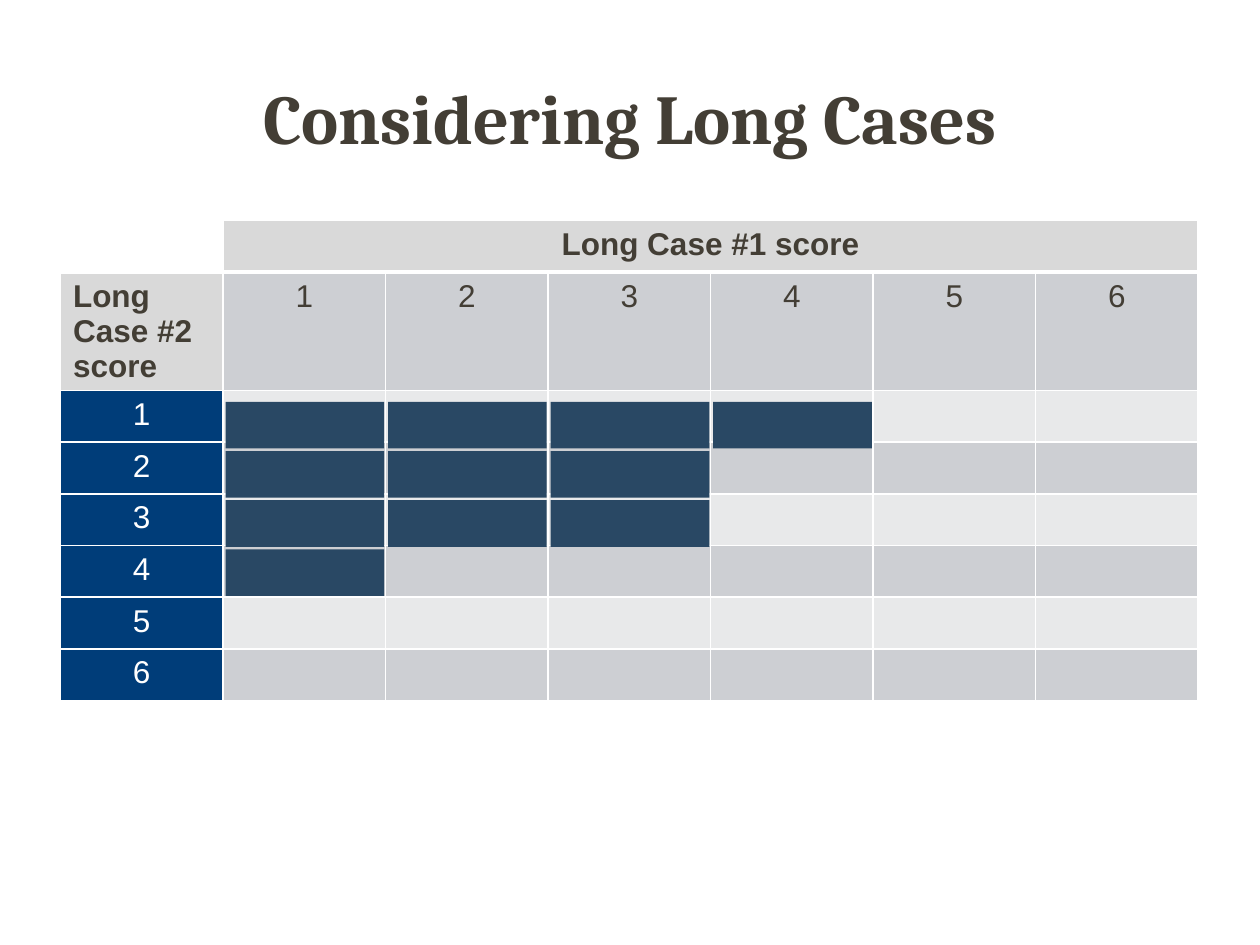
from lxml.etree import SubElement
from pptx import Presentation
from pptx.dml.color import RGBColor
from pptx.enum.shapes import MSO_SHAPE
from pptx.enum.text import MSO_ANCHOR, PP_ALIGN
from pptx.oxml.ns import qn
from pptx.util import Inches, Pt


def paint(fill, tone):
    fill.solid()
    fill.fore_color.rgb = RGBColor.from_string(tone)


def write(frame, text, size, face, tone, bold, align):
    line = frame.paragraphs[0]
    line.alignment = align
    run = line.add_run()
    run.text = text
    run.font.size = Pt(size)
    run.font.name = face
    run.font.bold = bold
    paint(run.font.fill, tone)


deck = Presentation()
deck.slide_width = Inches(10)
deck.slide_height = Inches(7.5)
slide = deck.slides.add_slide(deck.slide_layouts[6])

INK, WHITE, NAVY, SLATE = "433E35", "FFFFFF", "003D79", "294864"
HEAD, DARK, LIGHT = "D9D9D9", "CDCFD3", "E8E9EA"
LEFT, TOP, COL, ROW, TALL = 0.48, 1.75, 1.29, 0.41, 0.93
SCORES = 6

frame = slide.shapes.add_table(
    SCORES + 2, SCORES + 1, Inches(LEFT), Inches(TOP),
    Inches(COL * 7), Inches(ROW * 7 + TALL))
grid = frame.table
grid.first_row = False
grid.horz_banding = False
for col in grid.columns:
    col.width = Inches(COL)
for row in grid.rows:
    row.height = Inches(ROW)
grid.rows[1].height = Inches(TALL)

for r in range(SCORES + 2):
    for c in range(SCORES + 1):
        cell = grid.cell(r, c)
        props = cell._tc.get_or_add_tcPr()
        for side in "LRTB":
            thick = (r, side) in ((0, "B"), (1, "T"))
            edge = SubElement(props, qn("a:ln" + side), w=str(Pt(3 if thick else 1)))
            tint = SubElement(edge, qn("a:solidFill"))
            SubElement(tint, qn("a:srgbClr"), val=WHITE)
        text, tone, ink, bold, align = "", LIGHT if r % 2 == 0 else DARK, INK, False, PP_ALIGN.CENTER
        if r == 0:
            tone, bold = HEAD, True
            text = "Long Case #1 score" if c == 1 else ""
        elif r == 1 and c == 0:
            text, tone, bold, align = "Long Case #2 score", HEAD, True, PP_ALIGN.LEFT
        elif r == 1:
            text = str(c)
        elif c == 0:
            text, tone, ink = str(r - 1), NAVY, WHITE
        if r == c == 0:
            cell.fill.background()
        else:
            paint(cell.fill, tone)
        if text:
            write(cell.text_frame, text, 18, "Arial", ink, bold, align)
grid.cell(0, 1).merge(grid.cell(0, SCORES))

for r, count in enumerate((4, 3, 3, 1)):
    for c in range(count):
        block = slide.shapes.add_shape(
            MSO_SHAPE.RECTANGLE, Inches(1.79 + c * COL), Inches(3.19 + r * 0.39),
            Inches(1.26), Inches(0.37))
        block.shadow.inherit = False
        paint(block.fill, SLATE)
        block.line.fill.background()

title = slide.shapes.add_textbox(Inches(0.5), Inches(0.3), Inches(9), Inches(1.25))
title.text_frame.word_wrap = True
title.text_frame.vertical_anchor = MSO_ANCHOR.MIDDLE
write(title.text_frame, "Considering Long Cases", 40, "Cambria", INK, True, PP_ALIGN.CENTER)

deck.save("out.pptx")
